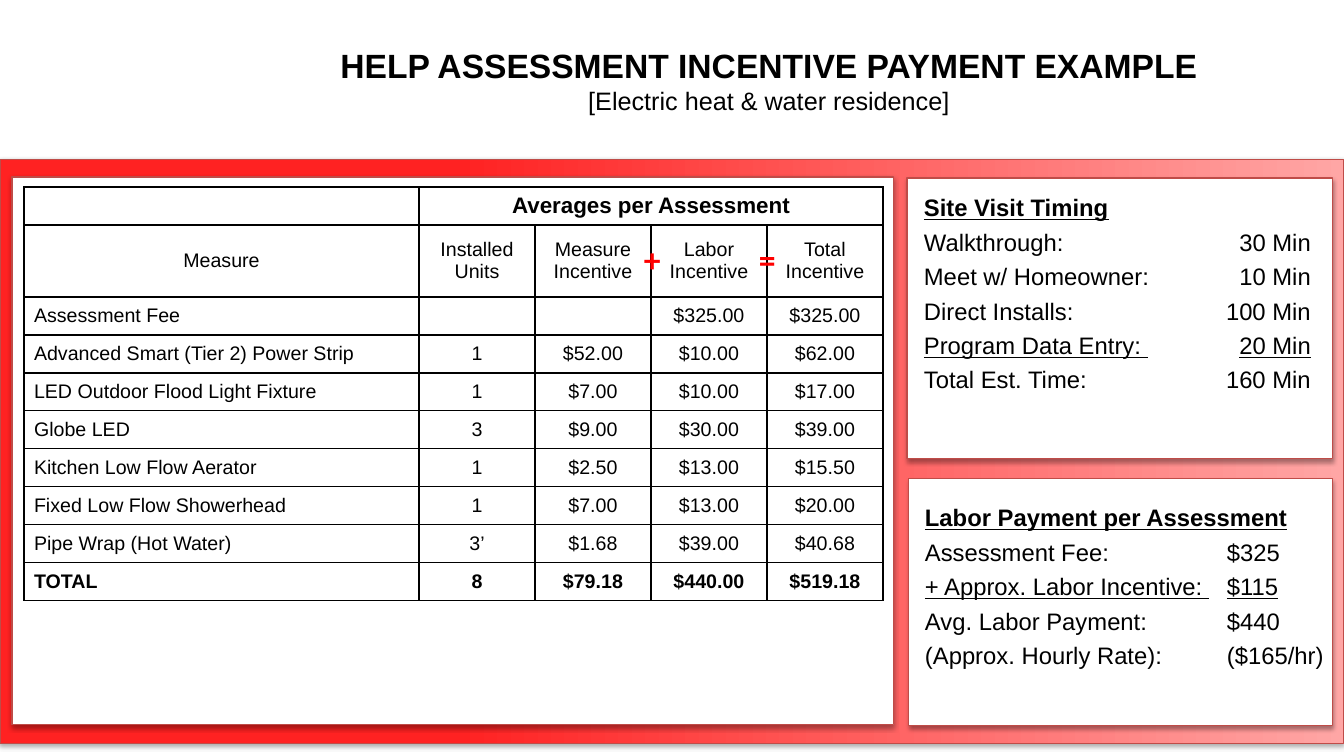
from lxml import etree
from pptx import Presentation
from pptx.dml.color import RGBColor
from pptx.enum.shapes import MSO_SHAPE as SHAPE
from pptx.enum.text import MSO_ANCHOR as ANCHOR, PP_ALIGN as ALIGN
from pptx.oxml import parse_xml
from pptx.oxml.ns import nsdecls, qn
from pptx.util import Pt

SCALE = 914400 / 100.8

TITLE = "HELP ASSESSMENT INCENTIVE PAYMENT EXAMPLE"
SUBTITLE = "[Electric heat & water residence]"
GROUP_HEADER = "Averages per Assessment"
MEASURES = [
    ("Measure", "Installed Units", "Measure Incentive", "Labor Incentive", "Total Incentive"),
    ("Assessment Fee", "", "", "$325.00", "$325.00"),
    ("Advanced Smart (Tier 2) Power Strip", "1", "$52.00", "$10.00", "$62.00"),
    ("LED Outdoor Flood Light Fixture", "1", "$7.00", "$10.00", "$17.00"),
    ("Globe LED", "3", "$9.00", "$30.00", "$39.00"),
    ("Kitchen Low Flow Aerator", "1", "$2.50", "$13.00", "$15.50"),
    ("Fixed Low Flow Showerhead", "1", "$7.00", "$13.00", "$20.00"),
    ("Pipe Wrap (Hot Water)", "3’", "$1.68", "$39.00", "$40.68"),
    ("TOTAL", "8", "$79.18", "$440.00", "$519.18"),
]
OPERATORS = ["+", "="]
SITE_VISIT = ("Site Visit Timing", [
    ("Walkthrough:", "30 Min", False),
    ("Meet w/ Homeowner:", "10 Min", False),
    ("Direct Installs:", "100 Min", False),
    ("Program Data Entry: ", "20 Min", True),
    ("Total Est. Time:", "160 Min", False),
])
LABOR = ("Labor Payment per Assessment", [
    ("Assessment Fee:", "$325", False),
    ("+ Approx. Labor Incentive: ", "$115", True),
    ("Avg. Labor Payment:", "$440", False),
    ("(Approx. Hourly Rate):", "($165/hr)", False),
])
CARDS = [(12, 177, 882, 548), (907, 178, 426, 281), (909, 479, 424, 247)]
NOTES = [
    (SITE_VISIT, (914, 188, 416, 246), 387, "r"),
    (LABOR, (915, 498, 430, 217), 302, "l"),
]
TABLE_X, TABLE_Y = 24, 187
COLS = [395] + [116] * 4
ROWS = [38, 72] + [38] * 8


def px(n):
    return round(n * SCALE)


def color(hex_):
    return RGBColor.from_string(hex_)


def write(p, text, size=14, bold=False, underline=False, font="Arial", hue="000000", align=None):
    r = p.add_run()
    r.text = text
    f = r.font
    f.size, f.bold, f.underline, f.name = Pt(size), bold, underline, font
    f.color.rgb = color(hue)
    if align is not None:
        p.alignment = align


def panel(s, box):
    sp = s.shapes.add_shape(SHAPE.RECTANGLE, *map(px, box))
    sp.fill.solid()
    sp.fill.fore_color.rgb = color("FFFFFF")
    sp.line.color.rgb = color("BF4C48")
    sp.line.width = Pt(0.75)
    sp.shadow.inherit = False
    effects = sp._element.spPr.find(qn("a:effectLst"))
    effects.append(parse_xml(
        f'<a:outerShdw {nsdecls("a")} blurRad="40000" dist="23000" dir="5400000" rotWithShape="0">'
        '<a:srgbClr val="000000"><a:alpha val="35000"/></a:srgbClr></a:outerShdw>'))
    return sp


def text_box(s, box, wrap=True):
    tf = s.shapes.add_textbox(*map(px, box)).text_frame
    tf.word_wrap = wrap
    return tf


def note(s, content, box, tab, side):
    heading, rows = content
    tf = text_box(s, box)
    write(tf.paragraphs[0], heading, size=17, bold=True, underline=True)
    for label, value, underline in rows:
        p = tf.add_paragraph()
        tabs = etree.SubElement(p._p.get_or_add_pPr(), qn("a:tabLst"))
        etree.SubElement(tabs, qn("a:tab"), pos=str(px(tab)), algn=side)
        p.space_before = Pt(4.2)
        write(p, label, size=17, underline=underline)
        write(p, "\t", size=17)
        write(p, value, size=17, underline=underline)


def style_cell(cell):
    cell.margin_left = cell.margin_right = cell.margin_top = cell.margin_bottom = 0
    cell.vertical_anchor = ANCHOR.MIDDLE
    cell.fill.background()
    for i, edge in enumerate("LRTB"):
        cell._tc.get_or_add_tcPr().insert(i, parse_xml(
            f'<a:ln{edge} {nsdecls("a")} w="12700"><a:solidFill>'
            f'<a:srgbClr val="000000"/></a:solidFill></a:ln{edge}>'))


def measure_table(s):
    frame = s.shapes.add_table(len(ROWS), len(COLS), px(TABLE_X), px(TABLE_Y),
                               px(sum(COLS)), px(sum(ROWS)))
    table = frame.table
    table.first_row = table.horz_banding = False
    for column, width in zip(table.columns, COLS):
        column.width = px(width)
    for row, height in zip(table.rows, ROWS):
        row.height = px(height)
    for cell in table.iter_cells():
        style_cell(cell)
    table.cell(0, 1).merge(table.cell(0, 4))
    write(table.cell(0, 1).text_frame.paragraphs[0], GROUP_HEADER,
          size=16, bold=True, align=ALIGN.CENTER)
    for i, values in enumerate(MEASURES, 1):
        for j, value in enumerate(values):
            if not value:
                continue
            p = table.cell(i, j).text_frame.paragraphs[0]
            is_name = j == 0 and i > 1
            if is_name:
                p._p.get_or_add_pPr().set("marL", str(px(10)))
            write(p, value, bold=i == len(MEASURES),
                  align=ALIGN.LEFT if is_name else ALIGN.CENTER)


def main():
    prs = Presentation()
    prs.slide_width, prs.slide_height = px(1344), px(756)
    s = prs.slides.add_slide(prs.slide_layouts[6])

    backdrop = panel(s, (0, 159, 1344, 585))
    backdrop.fill.gradient()
    backdrop.fill.gradient_angle = 0
    stops = [(0.34, "FF2222"), (1, "FFA6A5")]
    for stop, (position, hue) in zip(backdrop.fill.gradient_stops, stops):
        stop.position = position
        stop.color.rgb = color(hue)
    for box in CARDS:
        panel(s, box)

    tf = text_box(s, (244, 31, 1050, 99))
    tf.margin_top = tf.margin_bottom = 0
    tf.vertical_anchor = ANCHOR.MIDDLE
    write(tf.paragraphs[0], TITLE, size=24, bold=True, align=ALIGN.CENTER)
    write(tf.add_paragraph(), SUBTITLE, size=18, align=ALIGN.CENTER)

    for item in NOTES:
        note(s, *item)
    measure_table(s)
    for i, sign in enumerate(OPERATORS):
        tf = text_box(s, (634 + 115 * i, 234, 37, 50), wrap=False)
        write(tf.paragraphs[0], sign, size=24, bold=True, font="Calibri", hue="FF0000")
    prs.save("out.pptx")


if __name__ == "__main__":
    main()
